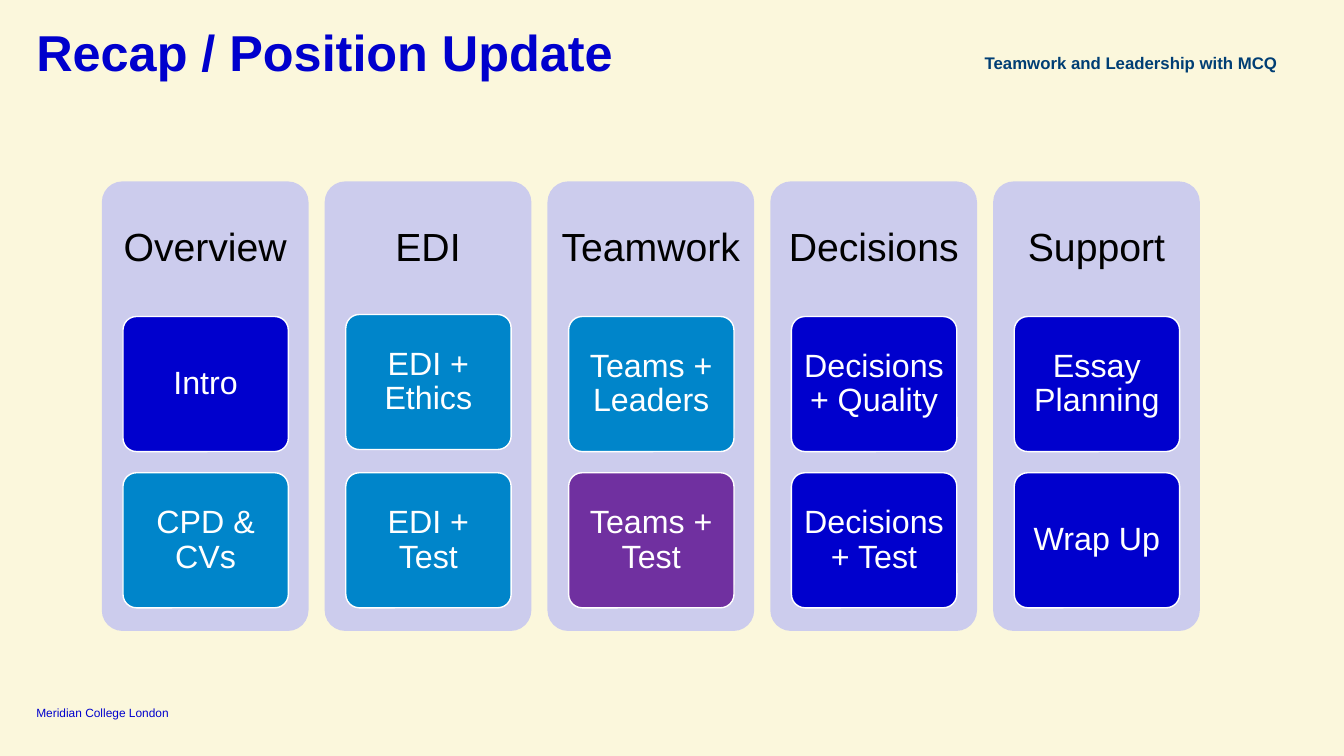
from pptx import Presentation
from pptx.dml.color import RGBColor
from pptx.enum.shapes import MSO_SHAPE as Shape
from pptx.enum.text import MSO_ANCHOR as Anchor, PP_ALIGN as Align
from pptx.util import Inches, Pt

BACKGROUND, PANEL = "FBF7DC", "CCCCED"
NAVY, BLUE, PURPLE = "0000CD", "0085CA", "7030A0"
TEAL, BLACK, WHITE = "003E74", "000000", "FFFFFF"

COLUMNS = [
    ("Overview", [("Intro", NAVY), ("CPD & CVs", BLUE)]),
    ("EDI", [("EDI + Ethics", BLUE), ("EDI + Test", BLUE)]),
    ("Teamwork", [("Teams + Leaders", BLUE), ("Teams + Test", PURPLE)]),
    ("Decisions", [("Decisions + Quality", NAVY), ("Decisions + Test", NAVY)]),
    ("Support", [("Essay Planning", NAVY), ("Wrap Up", NAVY)]),
]
RAISED_CARD = "EDI + Ethics"


def color(value):
    return RGBColor.from_string(value)


class SlideBuilder:
    font_name = "Arial"

    def __init__(self, presentation):
        self.slide = presentation.slides.add_slide(presentation.slide_layouts[6])
        fill = self.slide.background.fill
        fill.solid()
        fill.fore_color.rgb = color(BACKGROUND)

    def set_text(self, shape, text, size, ink, align=Align.LEFT, anchor=Anchor.TOP,
                 bold=False, spacing=0.9, insets=(0, 0)):
        frame = shape.text_frame
        frame.word_wrap = True
        frame.vertical_anchor = anchor
        frame.margin_left = frame.margin_right = Inches(insets[0])
        frame.margin_top = frame.margin_bottom = Inches(insets[1])
        paragraph = frame.paragraphs[0]
        paragraph.text = text
        paragraph.alignment = align
        paragraph.line_spacing = spacing
        font = paragraph.font
        font.name, font.size, font.bold = self.font_name, Pt(size), bold
        font.color.rgb = color(ink)

    def text(self, box, text, size, ink, **style):
        shape = self.slide.shapes.add_textbox(*map(Inches, box))
        self.set_text(shape, text, size, ink, **style)

    def rounded(self, box, fill, outline=None):
        shape = self.slide.shapes.add_shape(Shape.ROUNDED_RECTANGLE, *map(Inches, box))
        shape.adjustments[0] = 0.1
        shape.shadow.inherit = False
        shape.fill.solid()
        shape.fill.fore_color.rgb = color(fill)
        if outline:
            shape.line.color.rgb = color(outline)
            shape.line.width = Pt(1)
        else:
            shape.line.fill.background()
        return shape

    def card(self, left, top, text, fill):
        shape = self.rounded((left, top, 1.64, 1.34), fill, WHITE)
        self.set_text(shape, text, 23, WHITE, align=Align.CENTER,
                      anchor=Anchor.MIDDLE, insets=(0.06, 0.05))

    def column(self, left, heading, cards):
        self.rounded((left, 1.8, 2.05, 4.46), PANEL)
        self.text((left, 1.8, 2.05, 1.34), heading, 28, BLACK, align=Align.CENTER,
                  anchor=Anchor.MIDDLE, insets=(0.12, 0.12))
        for row, (label, fill) in enumerate(cards):
            lift = 0.02 if label == RAISED_CARD else 0
            self.card(left + 0.21, 3.14 + row * 1.55 - lift, label, fill)


def main():
    presentation = Presentation()
    presentation.slide_width = Inches(13.33)
    presentation.slide_height = Inches(7.5)
    builder = SlideBuilder(presentation)
    builder.text((0.36, 6.99, 1.55, 0.15), "Meridian College London", 8.5, NAVY,
                 anchor=Anchor.BOTTOM, spacing=1.0)
    builder.text((9.25, 0.51, 3.42, 0.34), "Teamwork and Leadership with MCQ", 12, TEAL,
                 align=Align.RIGHT, bold=True, spacing=1.05)
    for index, (heading, cards) in enumerate(COLUMNS):
        builder.column(1.01 + index * 2.21, heading, cards)
    builder.text((0.36, 0.28, 12.62, 0.41), "Recap / Position Update", 36, NAVY, bold=True)
    presentation.save("out.pptx")


if __name__ == "__main__":
    main()
